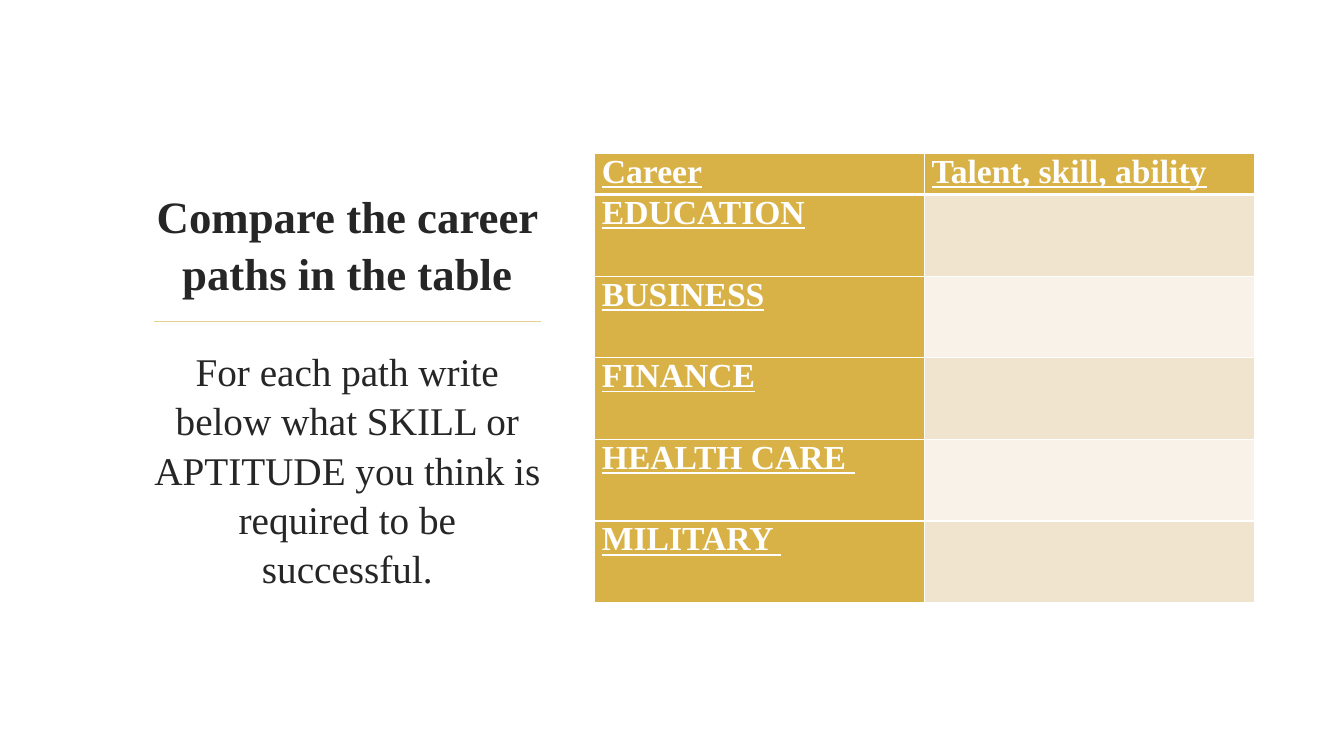
from dataclasses import dataclass

from lxml import etree
from pptx import Presentation
from pptx.dml.color import RGBColor
from pptx.enum.shapes import MSO_CONNECTOR
from pptx.enum.text import MSO_ANCHOR, MSO_AUTO_SIZE, PP_ALIGN
from pptx.oxml.ns import qn
from pptx.util import Inches, Pt

STRAIGHT = MSO_CONNECTOR.STRAIGHT
CENTER = PP_ALIGN.CENTER
BOTTOM, MIDDLE = MSO_ANCHOR.BOTTOM, MSO_ANCHOR.MIDDLE
NO_FIT = MSO_AUTO_SIZE.NONE


@dataclass(frozen=True)
class Theme:
    font: str = "Times New Roman"
    ink: str = "262626"
    white: str = "FFFFFF"
    gold: str = "D9B247"
    rule: str = "E8D191"
    bands: tuple[str, str] = ("F1E4CF", "F8F2E9")
    title_size: int = 32
    body_size: int = 28
    cell_size: int = 24
    border: int = 1
    header_border: int = 3


@dataclass(frozen=True)
class Caption:
    text: str
    top: float
    height: float
    size: int
    bold: bool
    anchor: MSO_ANCHOR
    space_after: int


THEME = Theme()
CAPTION_LEFT, CAPTION_WIDTH = 1.41, 4.07
TABLE_LEFT, TABLE_TOP = 5.9, 1.52
COLUMN_WIDTH, HEADER_HEIGHT, ROW_HEIGHT = 3.27, 0.41, 0.81
HEADINGS = ("Career", "Talent, skill, ability")
CAREERS = ("EDUCATION", "BUSINESS", "FINANCE", "HEALTH CARE ", "MILITARY ")
CAPTIONS = (
    Caption("Compare the career paths in the table",
            1.52, 1.5, THEME.title_size, True, BOTTOM, 0),
    Caption("For each path write below what SKILL or APTITUDE you think is "
            "required to be successful.",
            3.31, 2.67, THEME.body_size, False, MIDDLE, 6),
)


def add_span(para, text: str, size: int, color: str, bold: bool,
             underline: bool = False) -> None:
    span = para.add_run()
    span.text = text
    font = span.font
    font.name = THEME.font
    font.size = Pt(size)
    font.bold = bold
    font.underline = underline
    font.color.rgb = RGBColor.from_string(color)


def fill_caption(box, caption: Caption) -> None:
    box.left, box.top = Inches(CAPTION_LEFT), Inches(caption.top)
    box.width, box.height = Inches(CAPTION_WIDTH), Inches(caption.height)
    frame = box.text_frame
    frame.word_wrap = True
    frame.auto_size = NO_FIT
    frame.vertical_anchor = caption.anchor
    para = frame.paragraphs[0]
    properties = para._p.get_or_add_pPr()
    properties.set("marL", "0")
    properties.set("indent", "0")
    etree.SubElement(properties, qn("a:buNone"))
    para.alignment = CENTER
    para.line_spacing = 1.05
    para.space_before = Pt(0)
    para.space_after = Pt(caption.space_after)
    add_span(para, caption.text, caption.size, THEME.ink, caption.bold)


def add_rule(page) -> None:
    y = Inches(3.19)
    rule = page.shapes.add_connector(STRAIGHT, Inches(1.53), y, Inches(5.37), y)
    rule.line.color.rgb = RGBColor.from_string(THEME.rule)
    rule.line.width = Pt(1.25)
    etree.SubElement(rule._element.spPr, qn("a:effectLst"))


def set_borders(cell, top: int, bottom: int) -> None:
    properties = cell._tc.get_or_add_tcPr()
    widths = {"L": THEME.border, "R": THEME.border, "T": top, "B": bottom}
    for side, width in widths.items():
        line = etree.SubElement(properties, qn(f"a:ln{side}"), w=str(Pt(width)))
        fill = etree.SubElement(line, qn("a:solidFill"))
        etree.SubElement(fill, qn("a:srgbClr"), val=THEME.white)


def format_cell(cell, text: str, fill: str, top: int, bottom: int) -> None:
    set_borders(cell, top, bottom)
    cell.fill.solid()
    cell.fill.fore_color.rgb = RGBColor.from_string(fill)
    cell.margin_left = cell.margin_right = Inches(0.07)
    cell.margin_top = cell.margin_bottom = 0
    if text:
        add_span(cell.text_frame.paragraphs[0], text, THEME.cell_size,
                 THEME.white, True, True)


def add_career_table(page) -> None:
    rows = [HEADINGS, *((career, "") for career in CAREERS)]
    heights = [HEADER_HEIGHT] + [ROW_HEIGHT] * len(CAREERS)
    table = page.shapes.add_table(
        len(rows), len(HEADINGS), Inches(TABLE_LEFT), Inches(TABLE_TOP),
        Inches(COLUMN_WIDTH * len(HEADINGS)), Inches(sum(heights))).table
    table.first_col = True
    for column in table.columns:
        column.width = Inches(COLUMN_WIDTH)
    for r, (texts, height) in enumerate(zip(rows, heights)):
        table.rows[r].height = Inches(height)
        top = THEME.header_border if r == 1 else THEME.border
        bottom = THEME.header_border if r == 0 else THEME.border
        for c, text in enumerate(texts):
            fill = THEME.gold if r == 0 or c == 0 else THEME.bands[(r - 1) % 2]
            format_cell(table.cell(r, c), text, fill, top, bottom)


def main() -> None:
    deck = Presentation()
    deck.slide_width, deck.slide_height = Inches(13.33), Inches(7.5)
    page = deck.slides.add_slide(deck.slide_layouts[1])
    add_rule(page)
    for box, caption in zip(page.placeholders, CAPTIONS):
        fill_caption(box, caption)
    add_career_table(page)
    deck.save("out.pptx")


if __name__ == "__main__":
    main()
